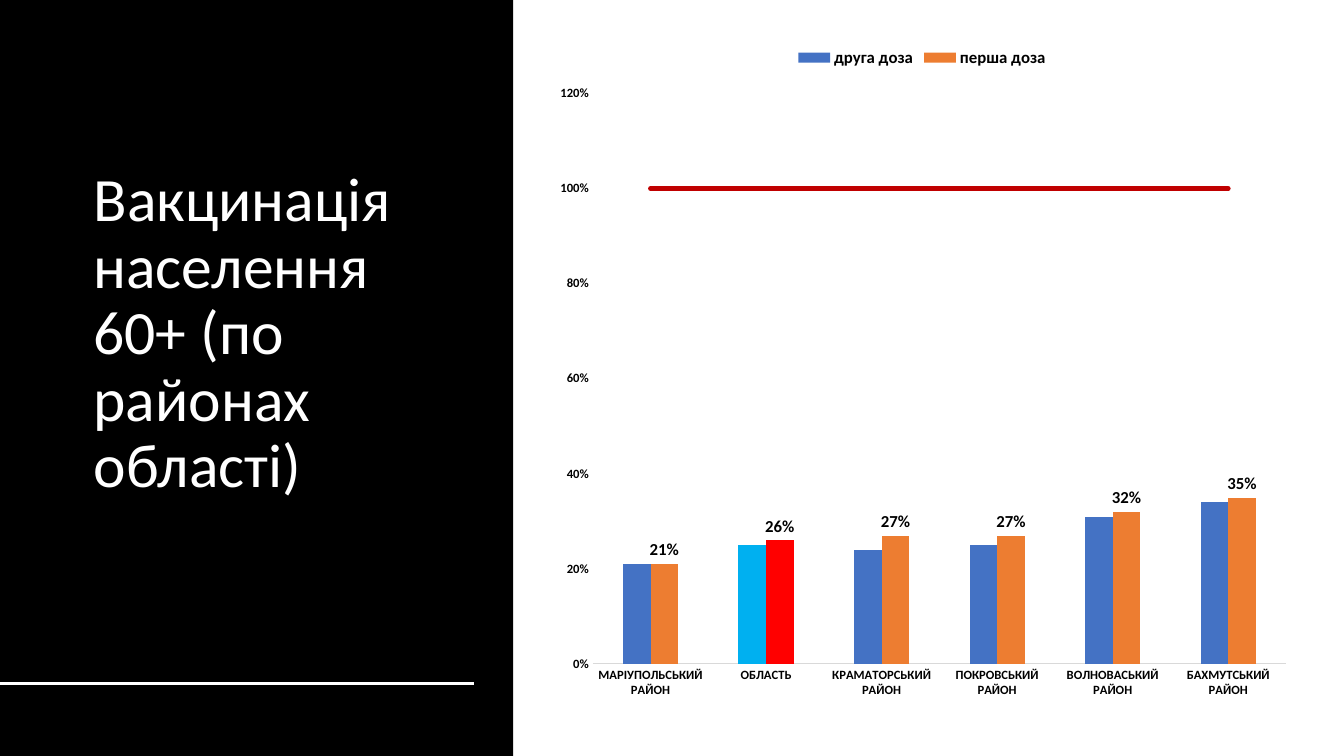
from copy import deepcopy
from dataclasses import dataclass

from lxml import etree
from pptx import Presentation
from pptx.chart.data import CategoryChartData
from pptx.dml.color import RGBColor
from pptx.enum import chart as charts, shapes, text
from pptx.oxml import ns
from pptx.util import Inches, Pt


@dataclass(frozen=True)
class Theme:
    font: str = "Calibri"
    black: str = "000000"
    white: str = "FFFFFF"
    axis: str = "D9D9D9"
    second_dose: str = "4472C4"
    first_dose: str = "ED7D31"
    region_second: str = "00B0F0"
    region_first: str = "FF0000"
    target: str = "C00000"
    title_size: int = 44
    chart_size: int = 10
    axis_size: int = 9
    label_size: int = 12


def add_child(parent, tag, **attributes):
    return etree.SubElement(parent, ns.qn(tag), attributes)


def remove_children(parent, tag):
    for child in parent.findall(ns.qn(tag)):
        parent.remove(child)


class SlideBuilder:
    def __init__(self, slide, theme):
        self.slide = slide
        self.theme = theme

    def paint(self, fill, color):
        fill.solid()
        fill.fore_color.rgb = RGBColor.from_string(color)

    def style_font(self, font, size, color, bold=False):
        font.name = self.theme.font
        font.size = Pt(size)
        font.bold = bold
        font.color.rgb = RGBColor.from_string(color)

    def style_line(self, line, color, width):
        self.paint(line.fill, color)
        line.width = Pt(width)

    def panel(self, left, top, width, height, color):
        panel = self.slide.shapes.add_shape(
            shapes.MSO_SHAPE.RECTANGLE,
            Inches(left), Inches(top), Inches(width), Inches(height))
        panel.shadow.inherit = False
        self.paint(panel.fill, color)
        panel.line.fill.background()

    def title(self, wording, left, top, width, height):
        frame = self.slide.shapes.add_textbox(
            Inches(left), Inches(top), Inches(width), Inches(height)).text_frame
        frame.word_wrap = True
        frame.vertical_anchor = text.MSO_ANCHOR.MIDDLE
        paragraph = frame.paragraphs[0]
        paragraph.line_spacing = 0.9
        run = paragraph.add_run()
        run.text = wording
        self.style_font(run.font, self.theme.title_size, self.theme.white)

    def rule(self, left, top, right, color, width):
        rule = self.slide.shapes.add_connector(
            shapes.MSO_CONNECTOR.STRAIGHT,
            Inches(left), Inches(top), Inches(right), Inches(top))
        self.style_line(rule.line, color, width)
        add_child(rule._element.spPr, "a:effectLst")

    def vaccination_chart(self, districts, doses, left, top, width, height):
        theme = self.theme
        data = CategoryChartData(number_format="0%")
        data.categories = districts
        for name, shares, *_ in doses:
            data.add_series(name, shares)
        data.add_series("Series 3", [1] * len(districts))
        chart = self.slide.shapes.add_chart(
            charts.XL_CHART_TYPE.COLUMN_CLUSTERED,
            Inches(left), Inches(top), Inches(width), Inches(height), data).chart
        chart.has_title = False
        self.style_font(chart.font, theme.chart_size, theme.black, True)
        plot = chart.plots[0]
        plot.gap_width = 219
        plot.overlap = 0
        plot.vary_by_categories = False

        for dose, (_, _, color, region_color) in zip(plot.series, doses):
            self.paint(dose.format.fill, color)
            self.paint(dose.points[1].format.fill, region_color)

        labels = plot.series[1].data_labels
        labels.show_value = True
        labels.number_format = "0%"
        labels.number_format_is_linked = False
        labels.position = charts.XL_LABEL_POSITION.OUTSIDE_END
        self.style_font(labels.font, theme.label_size, theme.black, True)

        self.style_axes(chart)
        self.style_legend(chart, hidden=len(doses))
        self.target_line(plot, plot.series[len(doses)])
        self.place_plot(chart, x=0.064, y=0.085, w=0.918, h=0.846)

    def style_axes(self, chart):
        theme = self.theme
        for axis in (chart.category_axis, chart.value_axis):
            axis.major_tick_mark = charts.XL_TICK_MARK.NONE
            axis.minor_tick_mark = charts.XL_TICK_MARK.NONE
            axis.has_major_gridlines = False
            self.style_font(axis.tick_labels.font, theme.axis_size, theme.black, True)
        self.style_line(chart.category_axis.format.line, theme.axis, 0.75)
        shares = chart.value_axis
        shares.format.line.fill.background()
        shares.minimum_scale = 0
        shares.maximum_scale = 1.2
        shares.major_unit = 0.2
        shares.tick_labels.number_format = "0%"
        shares.tick_labels.number_format_is_linked = False

    def style_legend(self, chart, hidden):
        chart.has_legend = True
        legend = chart.legend
        legend.position = charts.XL_LEGEND_POSITION.TOP
        legend.include_in_layout = False
        self.style_font(legend.font, self.theme.label_size, self.theme.black, True)
        entry = etree.Element(ns.qn("c:legendEntry"))
        add_child(entry, "c:idx", val=str(hidden))
        add_child(entry, "c:delete", val="1")
        remove_children(legend._element, "c:legendPos")
        position = etree.Element(ns.qn("c:legendPos"), val="t")
        legend._element.insert(0, position)
        position.addnext(entry)

    def target_line(self, plot, target):
        self.style_line(target.format.line, self.theme.target, 3.5)
        series = target._element
        outline = series.find(ns.qn("c:spPr"))
        outline.find(ns.qn("a:ln")).set("cap", "rnd")
        remove_children(series, "c:invertIfNegative")
        marker = etree.Element(ns.qn("c:marker"))
        add_child(marker, "c:symbol", val="none")
        outline.addnext(marker)
        add_child(series, "c:smooth", val="0")

        bars = plot._element
        line = etree.Element(ns.qn("c:lineChart"))
        add_child(line, "c:grouping", val="standard")
        add_child(line, "c:varyColors", val="0")
        line.append(series)
        add_child(line, "c:marker", val="1")
        for axis_id in bars.findall(ns.qn("c:axId")):
            line.append(deepcopy(axis_id))
        bars.addnext(line)

    def place_plot(self, chart, **box):
        area = chart._chartSpace.find(f".//{ns.qn('c:plotArea')}")
        remove_children(area, "c:layout")
        layout = etree.Element(ns.qn("c:layout"))
        manual = add_child(layout, "c:manualLayout")
        add_child(manual, "c:layoutTarget", val="inner")
        for side in "xy":
            add_child(manual, f"c:{side}Mode", val="edge")
        for side, share in box.items():
            add_child(manual, f"c:{side}", val=str(share))
        area.insert(0, layout)


def main():
    theme = Theme()
    deck = Presentation()
    deck.slide_width = Inches(13.33)
    deck.slide_height = Inches(7.5)
    builder = SlideBuilder(deck.slides.add_slide(deck.slide_layouts[6]), theme)
    builder.panel(0, 0, 5.09, 7.5, theme.black)
    builder.title("Вакцинація населення 60+ (по районах області)", 0.83, 0.61, 3.9, 5.42)
    builder.rule(0, 6.78, 4.7, theme.white, 2)
    districts = ["МАРІУПОЛЬСЬКИЙ РАЙОН", "ОБЛАСТЬ", "КРАМАТОРСЬКИЙ РАЙОН",
                 "ПОКРОВСЬКИЙ РАЙОН", "ВОЛНОВАСЬКИЙ РАЙОН", "БАХМУТСЬКИЙ РАЙОН"]
    doses = [("друга доза", [0.21, 0.25, 0.24, 0.25, 0.31, 0.34],
              theme.second_dose, theme.region_second),
             ("перша доза", [0.21, 0.26, 0.27, 0.27, 0.32, 0.35],
              theme.first_dose, theme.region_first)]
    builder.vaccination_chart(districts, doses, 5.4, 0.36, 7.49, 6.69)
    deck.save("out.pptx")


if __name__ == "__main__":
    main()
